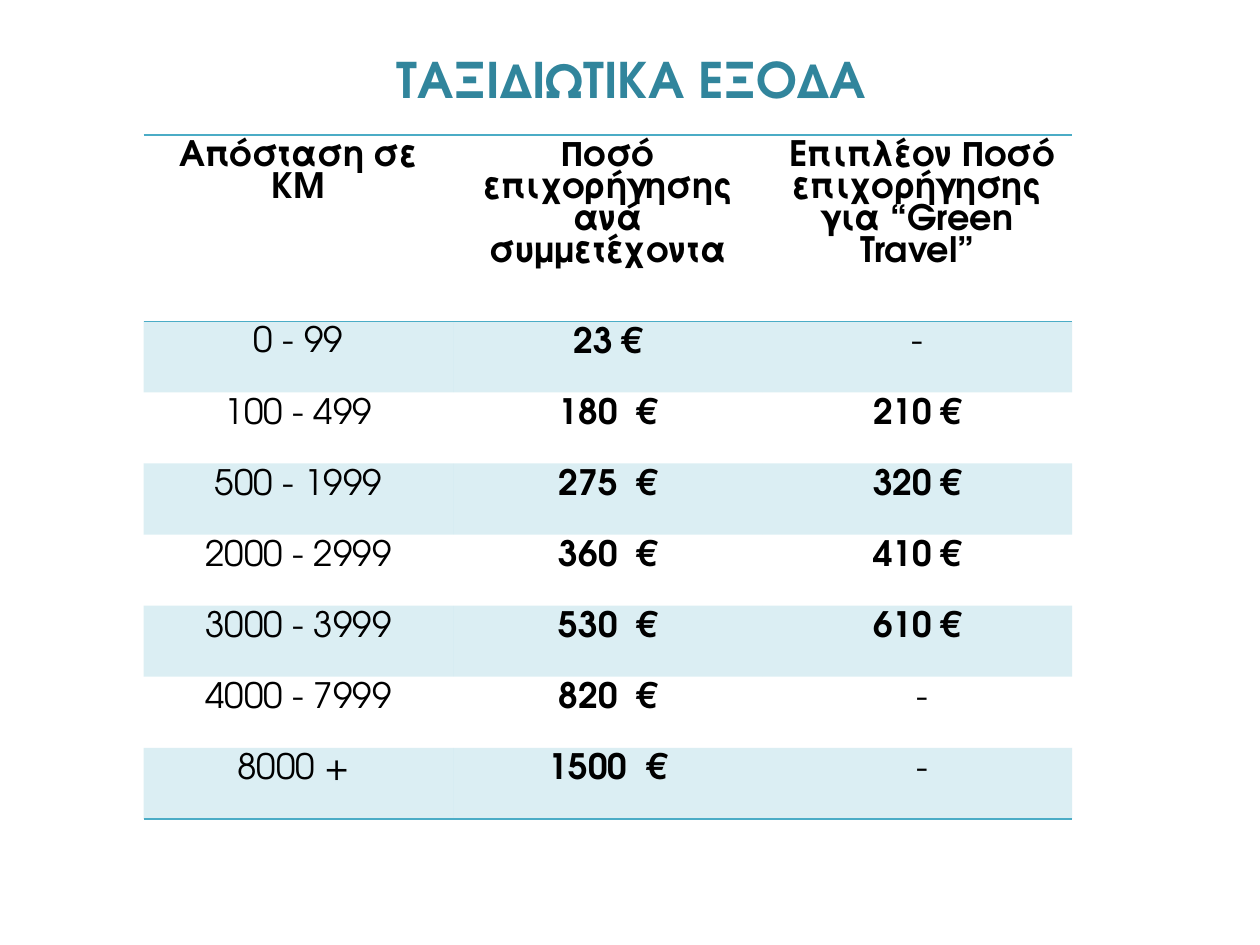
from lxml import etree
from pptx import Presentation
from pptx.dml.color import RGBColor
from pptx.enum.text import MSO_ANCHOR, PP_ALIGN
from pptx.oxml.ns import qn
from pptx.util import Inches, Pt

CENTER = PP_ALIGN.CENTER
MIDDLE = MSO_ANCHOR.MIDDLE
TITLE_ONLY = 5
FONT_NAME = "TeX Gyre Adventor"
TEAL = RGBColor(0x31, 0x85, 0x9C)
AQUA = RGBColor(0x4B, 0xAC, 0xC6)
BLACK = RGBColor(0, 0, 0)
BAND_ALPHA = 20000
PLAIN_TABLE_STYLE = "{2D5ABB26-0587-4C30-8999-92F81FD0307C}"

TITLE_FORMAT = {"name": FONT_NAME, "size": Pt(28), "bold": True}
CELL_FORMAT = {"name": FONT_NAME, "size": Pt(20)}

HEADINGS = (
    "Απόσταση σε KM",
    "Ποσό επιχορήγησης ανά συμμετέχοντα",
    " Επιπλέον Ποσό επιχορήγησης για “Green Travel”",
)
GRANTS = (
    ("0 - 99", "23 €", "-"),
    ("100 - 499", "180  €", "210 €"),
    ("500 - 1999", "275  €", "320 €"),
    ("2000 - 2999", "360  €", "410 €"),
    ("3000 - 3999", "530  €", "610 €"),
    ("4000 - 7999", "820  €", " -"),
    ("8000 + ", "1500  €", " -"),
)


def format_paragraph(paragraph, values, color):
    paragraph.alignment = CENTER
    font = paragraph.runs[0].font
    for attribute, value in values.items():
        setattr(font, attribute, value)
    font.color.rgb = color


def add_border(cell, side):
    properties = cell._tc.get_or_add_tcPr()
    border = etree.SubElement(properties, qn(f"a:{side}"), w=str(Pt(1)))
    fill = etree.SubElement(border, qn("a:solidFill"))
    etree.SubElement(fill, qn("a:srgbClr"), val=str(AQUA))


def fill_band(cell):
    cell.fill.solid()
    cell.fill.fore_color.rgb = AQUA
    color = cell._tc.tcPr.find(qn("a:solidFill")).find(qn("a:srgbClr"))
    etree.SubElement(color, qn("a:alpha"), val=str(BAND_ALPHA))


def place_title(slide, left, top, width, height):
    title = slide.shapes.title
    title.left, title.top, title.width, title.height = left, top, width, height
    title.text_frame.text = "ΤΑΞΙΔΙΩΤΙΚΑ ΕΞΟΔΑ"
    title.text_frame.vertical_anchor = MIDDLE
    format_paragraph(title.text_frame.paragraphs[0], TITLE_FORMAT, TEAL)


def add_grants_table(slide, left, top, width, height):
    rows = (HEADINGS, *GRANTS)
    frame = slide.shapes.add_table(len(rows), len(HEADINGS), left, top, width, height)
    table = frame.table
    table._tbl.tblPr.find(qn("a:tableStyleId")).text = PLAIN_TABLE_STYLE
    table.first_row = table.horz_banding = False

    heading_height = Inches(1.48)
    table.rows[0].height = heading_height
    for row_index in range(1, len(rows)):
        table.rows[row_index].height = (height - heading_height) // len(GRANTS)

    for row_index, row in enumerate(rows):
        is_heading = row_index == 0
        for column_index, wording in enumerate(row):
            cell = table.cell(row_index, column_index)
            cell.text = wording
            paragraph = cell.text_frame.paragraphs[0]
            paragraph.line_spacing = Pt(18.3)
            is_bold = is_heading or "€" in wording
            format_paragraph(paragraph, {**CELL_FORMAT, "bold": is_bold}, BLACK)
            if is_heading:
                add_border(cell, "lnT")
            if is_heading or row_index == len(GRANTS):
                add_border(cell, "lnB")
            if row_index % 2:
                fill_band(cell)
            else:
                cell.fill.background()


def main():
    presentation = Presentation()
    presentation.slide_width = Inches(10)
    presentation.slide_height = Inches(7.5)
    slide = presentation.slides.add_slide(presentation.slide_layouts[TITLE_ONLY])
    place_title(slide, Inches(0.51), Inches(0), Inches(9), Inches(1.25))
    add_grants_table(slide, Inches(1.14), Inches(1.07), Inches(7.37), Inches(5.43))
    presentation.save("out.pptx")


if __name__ == "__main__":
    main()
